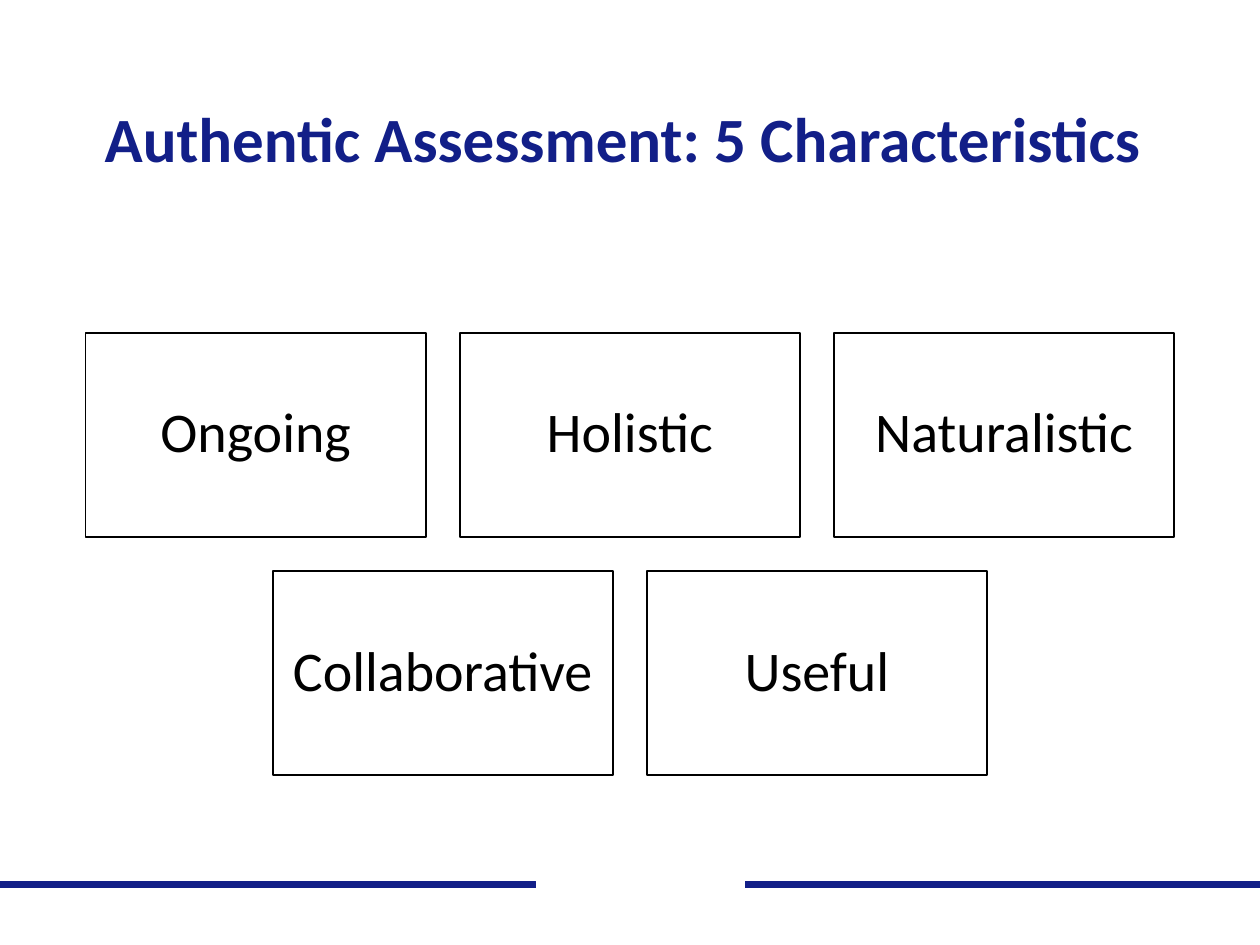
from lxml.etree import SubElement
from pptx import Presentation
from pptx.dml.color import RGBColor
from pptx.enum.shapes import MSO_CONNECTOR as Connector, MSO_SHAPE as Shape
from pptx.enum.text import MSO_ANCHOR as Anchor, PP_ALIGN as Align
from pptx.oxml.ns import qn
from pptx.util import Inches, Pt

NAVY = RGBColor(0x12, 0x1F, 0x88)
BLACK = RGBColor(0, 0, 0)
WHITE = RGBColor(0xFF, 0xFF, 0xFF)

WIDTH, HEIGHT = Inches(10), Inches(7.5)
CARD_WIDTH, CARD_HEIGHT = Inches(2.7), Inches(1.62)
GAP = Inches(0.27)
GRID_TOP = Inches(2.64)
ROWS = [["Ongoing", "Holistic", "Naturalistic"], ["Collaborative", "Useful"]]
TITLE_FONT = {"name": "Calibri", "size": Pt(36), "bold": True}
CARD_FONT = {"name": "Calibri", "size": Pt(32), "bold": False}


def write_text(box, text, font, color, inset_x, inset_y):
    frame = box.text_frame
    settings = {
        "word_wrap": True,
        "vertical_anchor": Anchor.MIDDLE,
        "margin_left": inset_x,
        "margin_right": inset_x,
        "margin_top": inset_y,
        "margin_bottom": inset_y,
    }
    for name, value in settings.items():
        setattr(frame, name, value)
    para = frame.paragraphs[0]
    para.alignment = Align.CENTER
    para.line_spacing = 0.9
    span = para.add_run()
    span.text = text
    for name, value in font.items():
        setattr(span.font, name, value)
    span.font.color.rgb = color


def add_rule(page, start, end, color):
    y = int(HEIGHT * 0.936)
    rule = page.shapes.add_connector(
        Connector.STRAIGHT, int(WIDTH * start), y, int(WIDTH * end), y
    )
    rule.line.color.rgb = color
    rule.line.width = Pt(4.5)
    SubElement(rule._element.spPr, qn("a:effectLst"))


def add_title(page, text):
    box = page.shapes.add_textbox(
        Inches(0.69), Inches(0.4), Inches(8.62), Inches(1.45)
    )
    write_text(box, text, TITLE_FONT, NAVY, Inches(0.1), Inches(0.05))


def add_card(page, left, top, text):
    card = page.shapes.add_shape(Shape.RECTANGLE, left, top, CARD_WIDTH, CARD_HEIGHT)
    card.shadow.inherit = False
    card.fill.solid()
    card.fill.fore_color.rgb = WHITE
    card.line.color.rgb = BLACK
    card.line.width = Pt(1)
    write_text(card, text, CARD_FONT, BLACK, Inches(0.13), Inches(0.13))


def add_centred_rows(page, rows):
    for row, labels in enumerate(rows):
        row_width = len(labels) * (CARD_WIDTH + GAP) - GAP
        row_left = (WIDTH - row_width) // 2
        top = GRID_TOP + row * (CARD_HEIGHT + GAP)
        for column, label in enumerate(labels):
            add_card(page, row_left + column * (CARD_WIDTH + GAP), top, label)


def main():
    deck = Presentation()
    deck.slide_width, deck.slide_height = WIDTH, HEIGHT
    page = deck.slides.add_slide(deck.slide_layouts[6])
    add_rule(page, 0, 1, NAVY)
    add_rule(page, 0.425, 0.591, WHITE)
    add_title(page, "Authentic Assessment: 5 Characteristics ")
    add_centred_rows(page, ROWS)
    deck.save("out.pptx")


if __name__ == "__main__":
    main()
